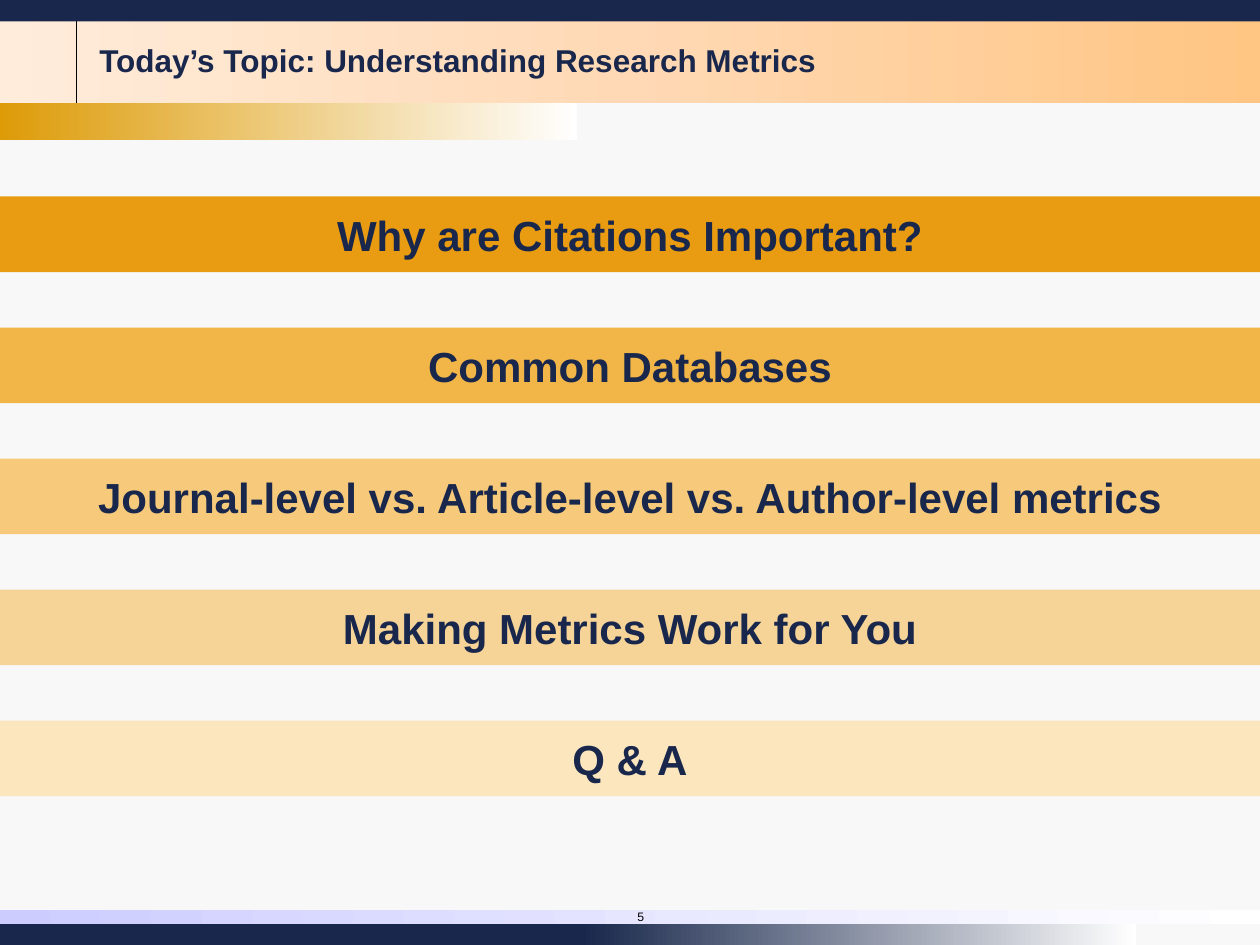
from copy import deepcopy

from lxml.etree import SubElement
from pptx import Presentation
from pptx.dml.color import RGBColor
from pptx.enum.shapes import MSO_CONNECTOR, MSO_SHAPE
from pptx.enum.text import MSO_ANCHOR, PP_ALIGN
from pptx.oxml.ns import qn
from pptx.util import Inches, Pt

COLORS = {
    "background": "F8F8F8",
    "navy": "18274B",
    "black": "000000",
    "white": "FFFFFF",
    "peach_light": "FFECDB",
    "peach": "FFD9B5",
    "peach_dark": "FFC583",
    "gold": "DD9B08",
    "lavender": "CCCCFF",
    "topic_1": "E99C11",
    "topic_2": "F2B548",
    "topic_3": "F6CA7A",
    "topic_4": "F6D498",
    "topic_5": "FBE6BD",
}
TOPICS = [
    "Why are Citations Important?",
    "Common Databases",
    "Journal-level vs. Article-level vs. Author-level metrics",
    "Making Metrics Work for You",
    "Q & A",
]
TOPIC_TOP, TOPIC_STEP, TOPIC_HEIGHT = 1.56, 1.04, 0.6


def rgb(name):
    return RGBColor.from_string(COLORS[name])


class SlideBuilder:
    font = "Arial"

    def __init__(self, slide):
        self.slide = slide
        fill = slide.background.fill
        fill.solid()
        fill.fore_color.rgb = rgb("background")

    def bar(self, x, y, w, h, *colors):
        """Add a borderless bar: one colour is solid, more run left to right."""
        sp = self.slide.shapes.add_shape(
            MSO_SHAPE.RECTANGLE, Inches(x), Inches(y), Inches(w), Inches(h))
        sp.shadow.inherit = False
        sp.line.fill.background()
        if len(colors) == 1:
            sp.fill.solid()
            sp.fill.fore_color.rgb = rgb(colors[0])
        else:
            self.gradient(sp, colors)
        return sp

    def gradient(self, sp, colors):
        sp.fill.gradient()
        sp.fill.gradient_angle = 0
        stop_list = sp._element.spPr.find(qn("a:gradFill")).find(qn("a:gsLst"))
        for _ in colors[2:]:
            stop_list.append(deepcopy(stop_list[-1]))
        for i, (stop, color) in enumerate(zip(sp.fill.gradient_stops, colors)):
            stop.position = i / (len(colors) - 1)
            stop.color.rgb = rgb(color)

    def line(self, x1, y1, x2, y2, color, width):
        cxn = self.slide.shapes.add_connector(
            MSO_CONNECTOR.STRAIGHT, Inches(x1), Inches(y1), Inches(x2), Inches(y2))
        cxn.line.color.rgb = rgb(color)
        cxn.line.width = Pt(width)
        SubElement(cxn._element.spPr, qn("a:effectLst"))

    def label(self, sp, text, size, color="navy", bold=True,
              align=PP_ALIGN.LEFT, anchor=MSO_ANCHOR.MIDDLE):
        tf = sp.text_frame
        tf.word_wrap = True
        tf.vertical_anchor = anchor
        p = tf.paragraphs[0]
        p.text = text
        p.alignment = align
        p.font.name = self.font
        p.font.size = Pt(size)
        p.font.bold = bold
        p.font.color.rgb = rgb(color)

    def text(self, x, y, w, h, text, size, **style):
        sp = self.slide.shapes.add_textbox(Inches(x), Inches(y), Inches(w), Inches(h))
        self.label(sp, text, size, **style)


def main():
    prs = Presentation()
    prs.slide_width, prs.slide_height = Inches(10), Inches(7.5)
    s = SlideBuilder(prs.slides.add_slide(prs.slide_layouts[6]))

    # Header
    s.bar(0, 0, 10, 0.82, "peach_light", "peach", "peach_dark")
    s.bar(0, 0, 10, 0.17, "navy")
    s.line(0.61, 0.17, 0.61, 0.82, "black", 0.75)
    s.bar(0, 0.82, 4.58, 0.29, "gold", "white")
    s.text(0.69, 0.08, 9.14, 0.79, "Today’s Topic: Understanding Research Metrics", 18)

    # Footer
    s.bar(0, 7.33, 8.69, 0.17, "navy")
    s.bar(0, 7.22, 10, 0.11, "lavender", "white")
    s.bar(4.61, 7.33, 4.41, 0.17, "navy", "white")
    s.text(4.79, 7.17, 0.42, 0.2, "5", 7, color="black", bold=False,
           align=PP_ALIGN.RIGHT, anchor=MSO_ANCHOR.TOP)

    # Topics
    for i, topic in enumerate(TOPICS):
        sp = s.bar(0, TOPIC_TOP + i * TOPIC_STEP, 10, TOPIC_HEIGHT, f"topic_{i + 1}")
        s.label(sp, topic, 24, align=PP_ALIGN.CENTER)

    prs.save("out.pptx")


if __name__ == "__main__":
    main()
